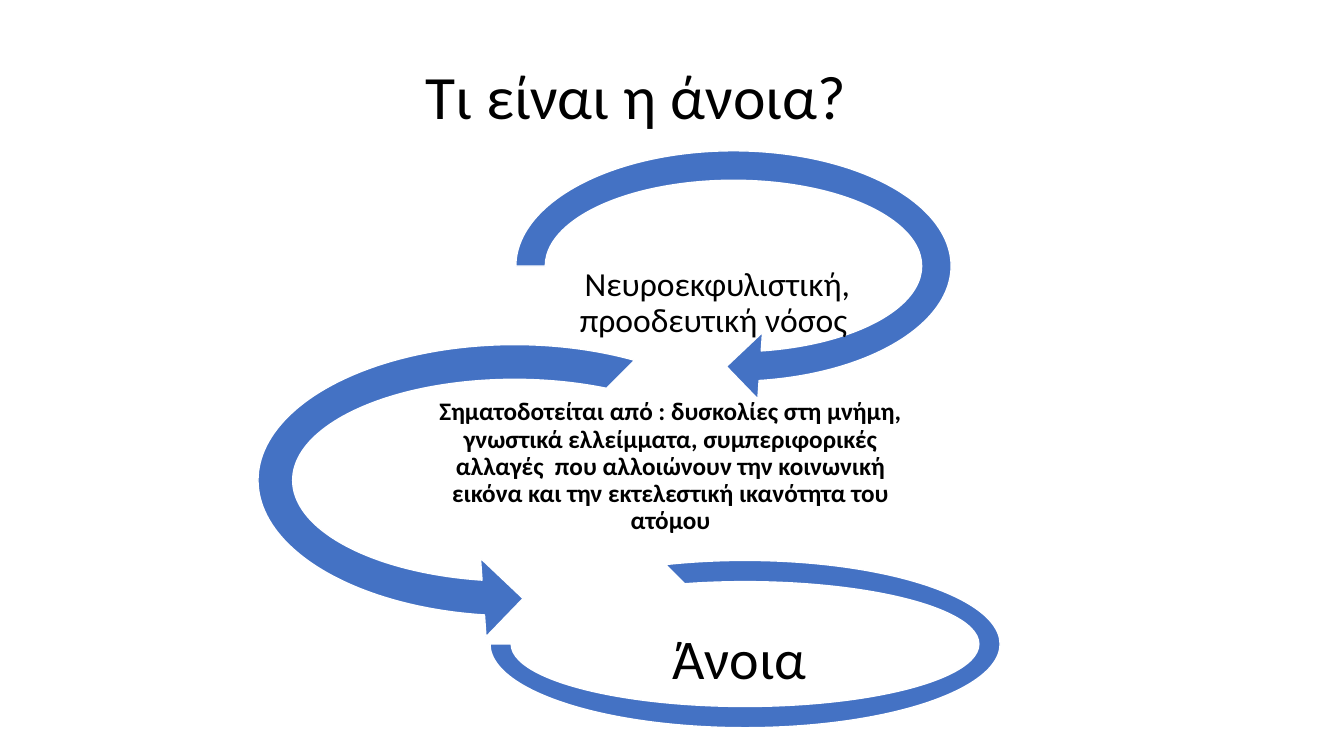
from dataclasses import dataclass

from pptx import Presentation
from pptx.dml.color import RGBColor
from pptx.enum.shapes import MSO_SHAPE
from pptx.enum.text import MSO_ANCHOR, PP_ALIGN
from pptx.slide import Slide
from pptx.util import Inches, Pt

BLUE = RGBColor(0x44, 0x72, 0xC4)
WHITE = RGBColor(0xFF, 0xFF, 0xFF)
BLACK = RGBColor(0x00, 0x00, 0x00)
FONT = "Calibri"
CENTER = PP_ALIGN.CENTER
MIDDLE = MSO_ANCHOR.MIDDLE
RIGHT_ARROW = MSO_SHAPE.CIRCULAR_ARROW
LEFT_ARROW = MSO_SHAPE.LEFT_CIRCULAR_ARROW
ARC = MSO_SHAPE.BLOCK_ARC

Box = tuple[float, float, float, float]


@dataclass(frozen=True)
class Label:
    text: str
    box: Box
    size: float
    inset: float
    bold: bool = False


@dataclass(frozen=True)
class Loop:
    kind: MSO_SHAPE
    box: Box
    adjustments: tuple[float, ...]
    label: Label


TITLE = Label("Τι είναι η άνοια?", (1.86, 0.36, 8.9, 1.26), 44, 0.1)

LOOPS = (
    Loop(RIGHT_ARROW, (4.93, 1.31, 4.69, 2.66), (0.11, 11.42, 45, 108, 0.125),
         Label("Νευροεκφυλιστική, προοδευτική νόσος ",
               (5.66, 2.41, 2.91, 1.21), 24, 0.02)),
    Loop(LEFT_ARROW, (2.34, 3.2, 5.53, 3.13), (0.11, 11.42, 63, 189, 0.125),
         Label("Σηματοδοτείται από : δυσκολίες στη μνήμη, γνωστικά ελλείμματα, "
               "συμπεριφορικές αλλαγές  που αλλοιώνουν την κοινωνική εικόνα "
               "και την εκτελεστική ικανότητα του ατόμου",
               (4.23, 3.99, 4.84, 1.29), 18, 0.01, bold=True)),
    Loop(ARC, (4.86, 5.56, 5.06, 1.66), (135, 108, 0.127),
         Label("Άνοια", (6.59, 6.19, 1.48, 0.74), 40, 0.03)),
)


def add_label(slide: Slide, label: Label) -> None:
    shape = slide.shapes.add_textbox(*map(Inches, label.box))
    frame = shape.text_frame
    frame.text = label.text
    frame.word_wrap = True
    frame.vertical_anchor = MIDDLE
    frame.margin_left = frame.margin_right = Inches(label.inset)
    frame.margin_top = frame.margin_bottom = Inches(label.inset)
    paragraph = frame.paragraphs[0]
    paragraph.alignment = CENTER
    paragraph.line_spacing = 0.9
    font = paragraph.runs[0].font
    font.name = FONT
    font.size = Pt(label.size)
    font.bold = label.bold
    font.color.rgb = BLACK


def add_loop(slide: Slide, loop: Loop) -> None:
    """Draw a curved band and the text it encircles."""
    shape = slide.shapes.add_shape(loop.kind, *map(Inches, loop.box))
    for index, value in enumerate(loop.adjustments):
        shape.adjustments[index] = value
    shape.shadow.inherit = False
    shape.fill.solid()
    shape.fill.fore_color.rgb = BLUE
    shape.line.color.rgb = WHITE
    shape.line.width = Pt(1)
    add_label(slide, loop.label)


def main() -> None:
    presentation = Presentation()
    presentation.slide_width = Inches(13.33)
    presentation.slide_height = Inches(7.5)
    slide = presentation.slides.add_slide(presentation.slide_layouts[6])
    add_label(slide, TITLE)
    for loop in LOOPS:
        add_loop(slide, loop)
    presentation.save("out.pptx")


if __name__ == "__main__":
    main()
